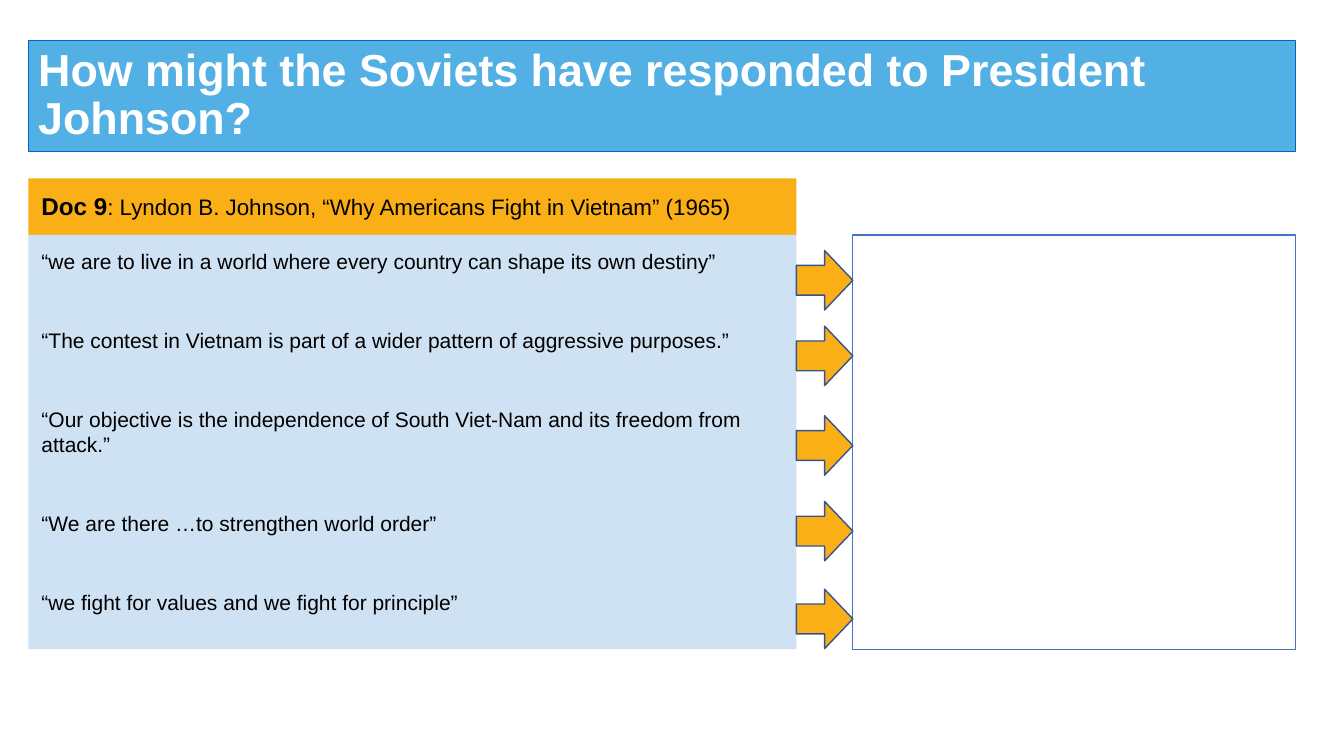
import pptx
import pptx.dml.color
import pptx.enum.shapes
import pptx.enum.text
import pptx.util

Pt = pptx.util.Pt
RGBColor = pptx.dml.color.RGBColor
MSO_SHAPE = pptx.enum.shapes.MSO_SHAPE
MSO_ANCHOR = pptx.enum.text.MSO_ANCHOR
PP_ALIGN = pptx.enum.text.PP_ALIGN

WHITE = RGBColor(0xFF, 0xFF, 0xFF)
BLACK = RGBColor(0, 0, 0)
SKY = RGBColor(0x52, 0xB0, 0xE4)
TITLE_EDGE = RGBColor(0x00, 0x66, 0xC2)
AMBER = RGBColor(0xFB, 0xAF, 0x17)
PALE_BLUE = RGBColor(0xCF, 0xE2, 0xF3)
BOX_EDGE = RGBColor(0x44, 0x72, 0xC4)
ARROW_EDGE = RGBColor(0x32, 0x54, 0x91)

LEFT, WIDTH = 20.2, 905
HEADER_TOP, BODY_TOP, BODY_HEIGHT = 127.4, 167.8, 295.9
QUOTES_WIDTH, ANSWER_WIDTH = 548.6, 316.1
ARROW_WIDTH, ARROW_HEIGHT = 40.4, 42.5
ARROW_CENTERS = [200.2, 254.2, 318.2, 379.4, 442.1]
QUOTES = [
    "“we are to live in a world where every country can shape its own destiny”",
    "“The contest in Vietnam is part of a wider pattern of aggressive purposes.”",
    "“Our objective is the independence of South Viet-Nam and its freedom from attack.”",
    "“We are there …to strengthen world order”",
    "“we fight for values and we fight for principle”",
]


class SlideBuilder:
    """Draws styled shapes and text on one slide."""

    def __init__(self, slide, font="Arial"):
        self.slide = slide
        self.font = font

    def shape(self, kind, x, y, w, h, fill, edge=None, weight=1):
        sp = self.slide.shapes.add_shape(kind, Pt(x), Pt(y), Pt(w), Pt(h))
        sp.shadow.inherit = False
        sp.fill.solid()
        sp.fill.fore_color.rgb = fill
        if edge is None:
            sp.line.fill.background()
        else:
            sp.line.color.rgb = edge
            sp.line.width = Pt(weight)
        return sp

    def text(self, sp, paragraphs, color=BLACK, anchor=MSO_ANCHOR.TOP,
             inset=(9.4, 9.4), gap=0, spacing=1.0):
        tf = sp.text_frame
        tf.word_wrap = True
        tf.vertical_anchor = anchor
        tf.margin_left = tf.margin_right = Pt(inset[0])
        tf.margin_top = tf.margin_bottom = Pt(inset[1])
        for i, runs in enumerate(paragraphs):
            p = tf.add_paragraph() if i else tf.paragraphs[0]
            p.alignment = PP_ALIGN.LEFT
            p.line_spacing = spacing
            p.space_before = Pt(gap if i else 0)
            for wording, size, bold in runs:
                r = p.add_run()
                r.text = wording
                r.font.name = self.font
                r.font.size = Pt(size)
                r.font.bold = bold
                r.font.color.rgb = color


def main():
    prs = pptx.Presentation()
    prs.slide_width, prs.slide_height = Pt(960), Pt(540)
    s = SlideBuilder(prs.slides.add_slide(prs.slide_layouts[6]))

    title = s.shape(MSO_SHAPE.RECTANGLE, LEFT, 28.8, WIDTH, 79.2, SKY, TITLE_EDGE, 0.75)
    s.text(title, [[("How might the Soviets have responded to President Johnson?", 32, True)]],
           WHITE, MSO_ANCHOR.MIDDLE, inset=(7.2, 3.6), spacing=0.9)

    header = s.shape(MSO_SHAPE.RECTANGLE, LEFT, HEADER_TOP, QUOTES_WIDTH,
                     BODY_TOP - HEADER_TOP, AMBER)
    s.text(header, [[("Doc 9", 17.3, True),
                     (": Lyndon B. Johnson, “Why Americans Fight in Vietnam” (1965)", 16, False)]])

    quotes = s.shape(MSO_SHAPE.RECTANGLE, LEFT, BODY_TOP, QUOTES_WIDTH, BODY_HEIGHT, PALE_BLUE)
    s.text(quotes, [[(quote, 15, False)] for quote in QUOTES], gap=38.5)

    s.shape(MSO_SHAPE.FLOWCHART_PROCESS, LEFT + WIDTH - ANSWER_WIDTH, BODY_TOP,
            ANSWER_WIDTH, BODY_HEIGHT, WHITE, BOX_EDGE)
    for center in ARROW_CENTERS:
        s.shape(MSO_SHAPE.RIGHT_ARROW, LEFT + QUOTES_WIDTH, center - ARROW_HEIGHT / 2,
                ARROW_WIDTH, ARROW_HEIGHT, AMBER, ARROW_EDGE)

    prs.save("out.pptx")


if __name__ == "__main__":
    main()
